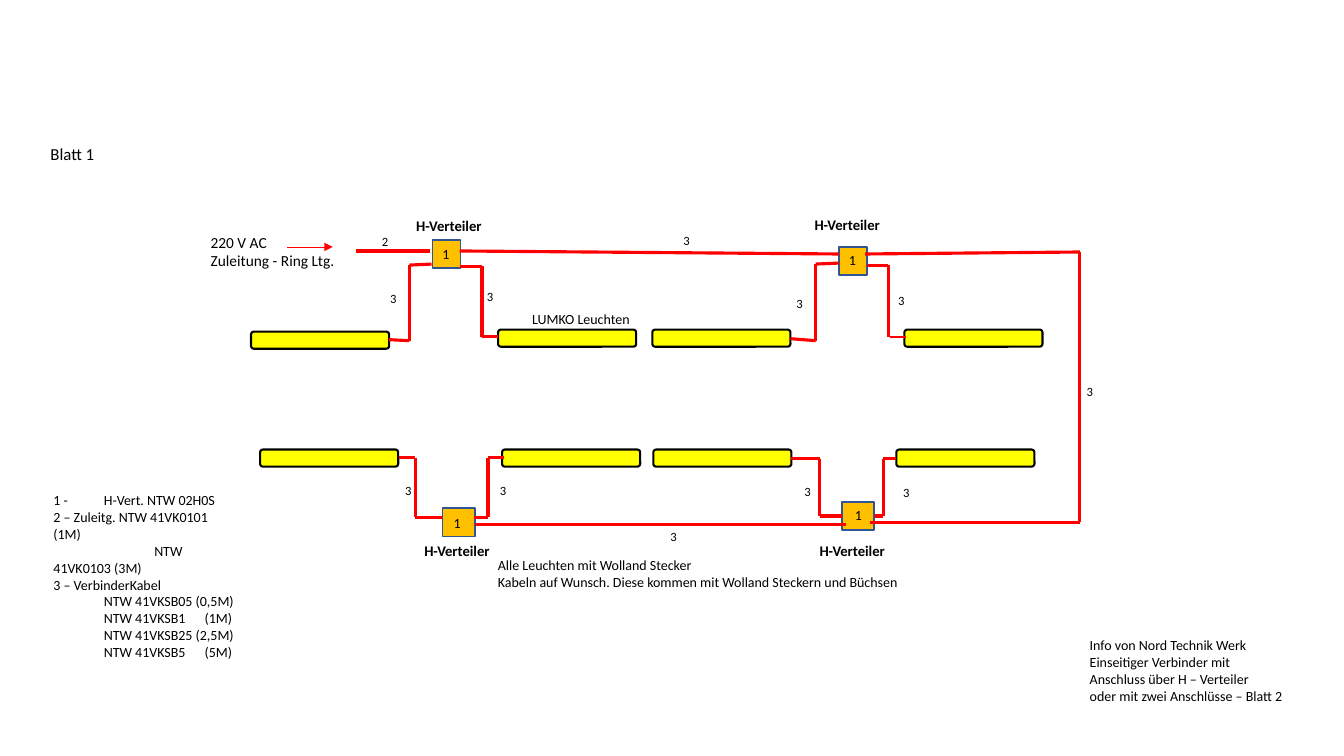
"""Build the wiring plan of the luminaires with their H-Verteiler."""
from itertools import pairwise

from lxml.etree import SubElement
from pptx import Presentation
from pptx.dml.color import RGBColor
from pptx.enum.shapes import MSO_CONNECTOR, MSO_SHAPE
from pptx.enum.text import MSO_ANCHOR, MSO_AUTO_SIZE, PP_ALIGN
from pptx.oxml.ns import qn
from pptx.util import Inches, Pt

THEME = {
    "text": RGBColor(0, 0, 0),
    "wire": RGBColor(255, 0, 0),
    "lamp": RGBColor(255, 255, 0),
    "box": RGBColor(255, 192, 0),
    "box_line": RGBColor(0x32, 0x54, 0x91),
    "sheet": {"name": "Calibri", "size": Pt(12), "bold": False},
    "supply": {"name": "Calibri", "size": Pt(11), "bold": False},
    "heading": {"name": "Calibri", "size": Pt(10.5), "bold": True},
    "note": {"name": "Calibri", "size": Pt(10), "bold": False},
    "number": {"name": "Calibri", "size": Pt(9), "bold": False},
}
CELL = Inches(0.1)
LEGEND_TABS = (2.2, 6.6, 10.8)


def grid(*cells):
    """Turn columns and rows of the grid into lengths."""
    return [round(cell * CELL) for cell in cells]


def write(shape, lines, style, wrap=False, tabs=()):
    """Fill a shape with left-aligned lines in one style of the theme."""
    frame = shape.text_frame
    frame.text = "\n".join(lines)
    frame_format = {"word_wrap": wrap, "auto_size": MSO_AUTO_SIZE.NONE,
                    "vertical_anchor": MSO_ANCHOR.TOP}
    for name, value in frame_format.items():
        setattr(frame, name, value)
    for paragraph in frame.paragraphs:
        properties = paragraph._p.get_or_add_pPr()
        properties.set("marL", "0")
        properties.set("indent", "0")
        paragraph.alignment = PP_ALIGN.LEFT
        paragraph.space_before = Pt(0)
        SubElement(properties, qn("a:buNone"))
        if tabs:
            tab_list = SubElement(properties, qn("a:tabLst"))
            for position in grid(*tabs):
                SubElement(tab_list, qn("a:tab"), pos=str(position), algn="l")
        for name, value in THEME[style].items():
            setattr(paragraph.font, name, value)
        paragraph.font.color.rgb = THEME["text"]


presentation = Presentation()
presentation.slide_width, presentation.slide_height = Inches(13.33), Inches(7.5)
slide = presentation.slides.add_slide(presentation.slide_layouts[1])
shapes = slide.shapes

lamps = [(24.9, 32.9), (49.4, 32.7), (64.7, 32.7), (89.7, 32.7)]
lamps += [(column, 44.6) for column in (25.8, 49.8, 64.8, 88.9)]
distributors = [(42.9, 23.8, 2.8), (83.2, 24.5, 2.8),
                (83.5, 49.8, 3.2), (43.9, 50.4, 3.2)]
blocks = [(MSO_SHAPE.ROUNDED_RECTANGLE, (*lamp, 13.7, 1.7), "lamp", "text", 1.5)
          for lamp in lamps]
blocks += [(MSO_SHAPE.RECTANGLE, (*distributor, 2.8), "box", "box_line", 1)
           for distributor in distributors]
for kind, place, fill, line, width in blocks:
    block = shapes.add_shape(kind, *grid(*place))
    block.shadow.inherit = False
    block.fill.solid()
    block.fill.fore_color.rgb = THEME[fill]
    block.line.color.rgb = THEME[line]
    block.line.width = Pt(width)

wires = [
    (1.5, [(88.3, 33.4), (89.9, 33.4)]),
    (2.25, [(35.3, 24.9), (42.7, 24.9)]),
    (2.25, [(42.8, 26.2), (40.6, 26.3), (40.6, 33.8), (38.6, 33.7)]),
    (2.25, [(45.6, 26.4), (47.8, 26.4), (47.8, 33.4), (49.4, 33.4)]),
    (2.25, [(45.6, 24.9), (83.2, 25.2)]),
    (2.25, [(83.2, 26.1), (80.9, 26.2), (80.9, 33.8), (78.4, 33.6)]),
    (2.25, [(86, 26.3), (88.1, 26.3), (88.1, 33.4)]),
    (2.25, [(85.8, 25.2), (107.1, 25), (107.1, 51.8), (86.3, 51.8)]),
    (2.25, [(78.5, 45.5), (81.3, 45.5), (81.3, 51.2), (83.5, 51.2)]),
    (2.25, [(88.9, 45.5), (87.6, 45.5), (87.6, 51.2), (86.8, 51.2)]),
    (2.25, [(39.6, 45.4), (41.2, 45.4), (41.2, 51.3), (43.8, 51.3)]),
    (2.25, [(50, 45.4), (48.4, 45.4), (48.4, 51.3), (47, 51.3)]),
    (2.25, [(47.1, 52), (83.9, 52)]),
    (0.5, [(28.5, 24.5), (33, 24.5)]),
]
for width, points in wires:
    for start, end in pairwise(points):
        wire = shapes.add_connector(MSO_CONNECTOR.STRAIGHT, *grid(*start, *end))
        wire.line.color.rgb = THEME["wire"]
        wire.line.width = Pt(width)
        SubElement(wire._element.spPr, qn("a:effectLst"))
SubElement(wire.line._get_or_add_ln(), qn("a:tailEnd"), type="triangle")

texts = [
    ((19.9, 22.6, 14.4, 4.7), "supply", ["220 V AC", "Zuleitung - Ring Ltg."]),
    ((51.8, 30.3, 11, 2.7), "note", ["LUMKO Leuchten"]),
    ((48.4, 54.7, 42.3, 4.4), "note", [
        "Alle Leuchten mit Wolland Stecker",
        "Kabeln auf Wunsch. Diese kommen mit Wolland Steckern und Büchsen"]),
    ((107.1, 62.7, 23.7, 7.7), "note", [
        "Info von Nord Technik Werk", "Einseitiger Verbinder mit",
        "Anschluss über H – Verteiler", "oder mit zwei Anschlüsse – Blatt 2"]),
    ((36.9, 22.7, 2.7, 2.5), "number", ["2"]),
]
texts += [((*spot, 8.8, 2.8), "heading", ["H-Verteiler"]) for spot in
          [(40.3, 21), (79.8, 20.9), (41.1, 53.3), (80.3, 53.3)]]
texts += [((*spot, 2.7, 2.7), "note", ["1"]) for spot in
          [(42.9, 23.9), (83.2, 24.5), (83.8, 49.8), (44, 50.6)]]
texts += [((*spot, 2.7, 2.5), "number", ["3"]) for spot in
          [(37.7, 28.4), (47.3, 28.2), (39.2, 47.4), (48.6, 47.4),
           (78, 28.9), (88.1, 28.6), (78.8, 47.5), (88.6, 47.6),
           (66.8, 22.6), (106.8, 37.6), (65.5, 52)]]
for place, style, lines in texts:
    write(shapes.add_textbox(*grid(*place)), lines, style)

legend = [
    "1 -\tH-Vert. NTW 02H0S", "2 – Zuleitg. NTW 41VK0101 (1M)",
    "\t\tNTW 41VK0103 (3M)", "3 – VerbinderKabel",
    "\tNTW 41VKSB05 (0,5M)", "\tNTW 41VKSB1\t(1M)",
    "\tNTW 41VKSB25 (2,5M)", "\tNTW 41VKSB5\t(5M)",
]
title, body = slide.placeholders
for placeholder, place in ((title, (4, 13.8, 6.5, 3)), (body, (4.3, 48.3, 20.2, 14.5))):
    for name, value in zip(("left", "top", "width", "height"), grid(*place)):
        setattr(placeholder, name, value)
write(title, ["Blatt 1"], "sheet")
write(body, legend, "note", wrap=True, tabs=LEGEND_TABS)

presentation.save("out.pptx")
